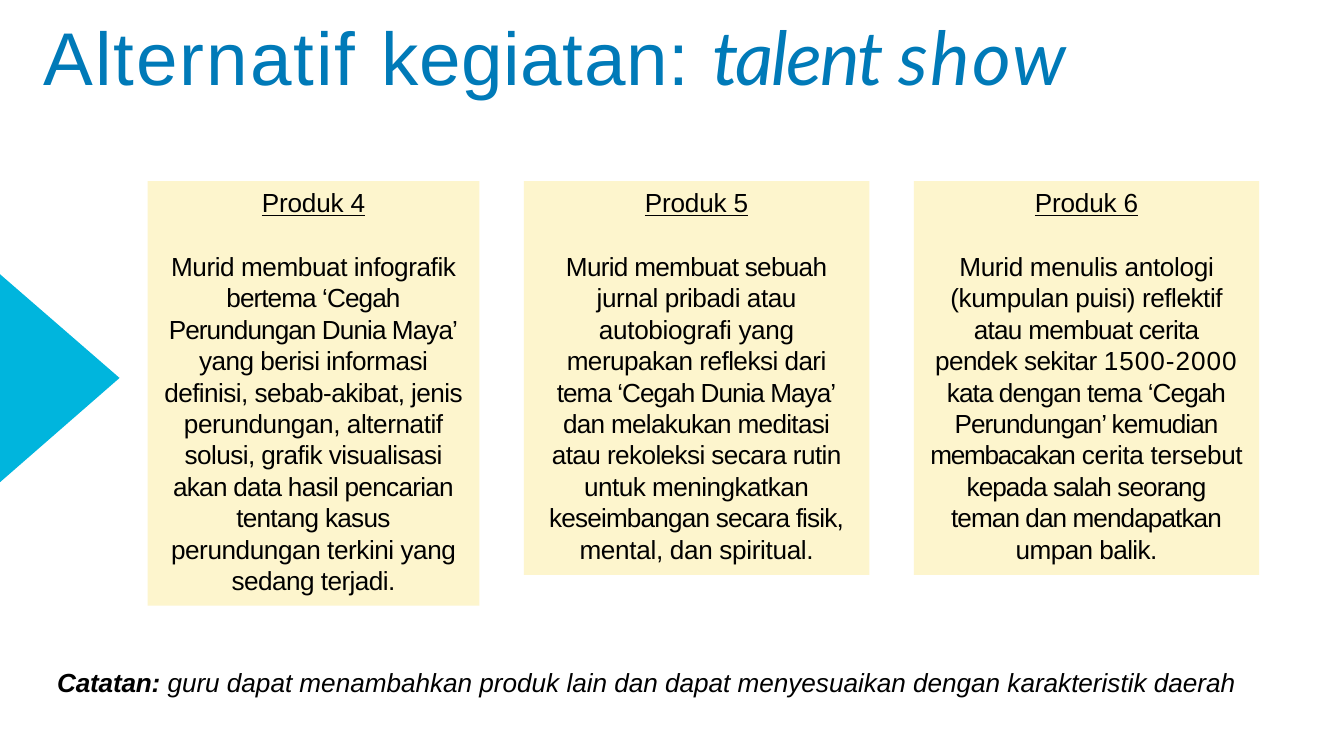
from pptx import Presentation
from pptx.dml.color import RGBColor
from pptx.enum.shapes import MSO_SHAPE
from pptx.enum.text import MSO_ANCHOR, MSO_AUTO_SIZE, PP_ALIGN
from pptx.util import Cm, Pt

COLORS = {"title": "007AB8", "accent": "00B5DD", "card": "FDF5CD", "text": "000000"}
CARD_TOP = 3.42

CARDS = [
    (2.79, 6.27, 8.02, "Produk 4", [
        ("Murid membuat infografik", -0.25),
        ("bertema ‘Cegah", -0.5),
        ("Perundungan Dunia Maya’", -0.5),
        ("yang berisi informasi", -0.3),
        ("definisi, sebab-akibat, jenis", -0.3),
        ("perundungan, alternatif", -0.25),
        ("solusi, grafik visualisasi", -0.3),
        ("akan data hasil pencarian", -0.4),
        ("tentang kasus", -0.4),
        ("perundungan terkini yang", -0.25),
        ("sedang terjadi.", -0.3),
    ]),
    (9.9, 6.53, 7.44, "Produk 5", [
        ("Murid membuat sebuah", -0.4),
        ("jurnal pribadi atau", -0.25),
        ("autobiografi yang", -0.2),
        ("merupakan refleksi dari", -0.3),
        ("tema ‘Cegah Dunia Maya’", -0.55),
        ("dan melakukan meditasi", -0.4),
        ("atau rekoleksi secara rutin", -0.35),
        ("untuk meningkatkan", -0.3),
        ("keseimbangan secara fisik,", -0.45),
        ("mental, dan spiritual.", -0.2),
    ]),
    (17.27, 6.53, 7.44, "Produk 6", [
        ("Murid menulis antologi", -0.2),
        ("(kumpulan puisi) reflektif", -0.25),
        ("atau membuat cerita", -0.4),
        ("pendek sekitar ", -0.35),
        ("1500-2000", 0.5),
        ("kata dengan tema ‘Cegah", -0.5),
        ("Perundungan’ kemudian", -0.5),
        ("membacakan ", -0.7),
        ("cerita tersebut", -0.2),
        ("kepada salah seorang", -0.5),
        ("teman dan mendapatkan", -0.5),
        ("umpan balik.", -0.35),
    ]),
]


def color(name):
    return RGBColor.from_string(COLORS[name])


def paint(shape, name):
    shape.shadow.inherit = False
    shape.fill.solid()
    shape.fill.fore_color.rgb = color(name)
    shape.line.fill.background()


def prepare_frame(shape, top_inset):
    frame = shape.text_frame
    frame.margin_left = frame.margin_right = frame.margin_bottom = 0
    frame.margin_top = Cm(top_inset)
    frame.vertical_anchor = MSO_ANCHOR.TOP
    frame.auto_size = MSO_AUTO_SIZE.NONE
    frame.word_wrap = False
    return frame


def add_run(paragraph, text, size, name, spacing=0, font="Arial"):
    run = paragraph.add_run()
    run.text = text
    run.font.size = Pt(size)
    run.font.name = font
    run.font.color.rgb = color(name)
    run.font._element.set("spc", str(round(spacing * 100)))
    return run


def add_title(slide):
    title = slide.shapes.title
    title.left, title.top, title.width, title.height = Cm(0.82), Cm(0.18), Cm(19.96), Cm(1.78)
    paragraph = prepare_frame(title, 0.03).paragraphs[0]
    paragraph.alignment = PP_ALIGN.LEFT
    add_run(paragraph, "Alternatif ", 40, "title", 1.1)
    add_run(paragraph, "kegiatan: ", 40, "title", 0.4)
    for text, spacing in (("talent ", -1.1), ("show", 1.1)):
        add_run(paragraph, text, 40, "title", spacing, "Lato").font.italic = True


def add_arrow(slide):
    builder = slide.shapes.build_freeform(Cm(0), Cm(5.18))
    builder.add_line_segments([(Cm(0), Cm(9.11)), (Cm(2.26), Cm(7.14))], close=True)
    paint(builder.convert_to_shape(), "accent")


def add_card(slide, left, width, height, heading, segments):
    card = slide.shapes.add_shape(
        MSO_SHAPE.RECTANGLE, Cm(left), Cm(CARD_TOP), Cm(width), Cm(height))
    paint(card, "card")
    frame = prepare_frame(card, 0.1)
    add_run(frame.paragraphs[0], heading, 14, "text", -0.1).font.underline = True
    body = frame.add_paragraph()
    body.space_before = Pt(17.5)
    line_is_open = True
    for text, spacing in segments:
        if not line_is_open:
            body.add_line_break()
        add_run(body, text, 14, "text", spacing)
        line_is_open = text.endswith(" ")
    for paragraph in frame.paragraphs:
        paragraph.alignment = PP_ALIGN.CENTER


def add_note(slide):
    note = slide.shapes.add_textbox(Cm(1.08), Cm(12.55), Cm(22.33), Cm(0.66))
    paragraph = prepare_frame(note, 0.03).paragraphs[0]
    label = add_run(paragraph, "Catatan: ", 14, "text", -0.1)
    label.font.bold = True
    message = add_run(
        paragraph,
        "guru dapat menambahkan produk lain dan dapat menyesuaikan dengan karakteristik daerah",
        14, "text", -0.02)
    for run in (label, message):
        run.font.italic = True


def main():
    presentation = Presentation()
    presentation.slide_width = Cm(25.4)
    presentation.slide_height = Cm(14.28)
    slide = presentation.slides.add_slide(presentation.slide_layouts[5])
    add_arrow(slide)
    for card in CARDS:
        add_card(slide, *card)
    add_title(slide)
    add_note(slide)
    presentation.save("out.pptx")


if __name__ == "__main__":
    main()
